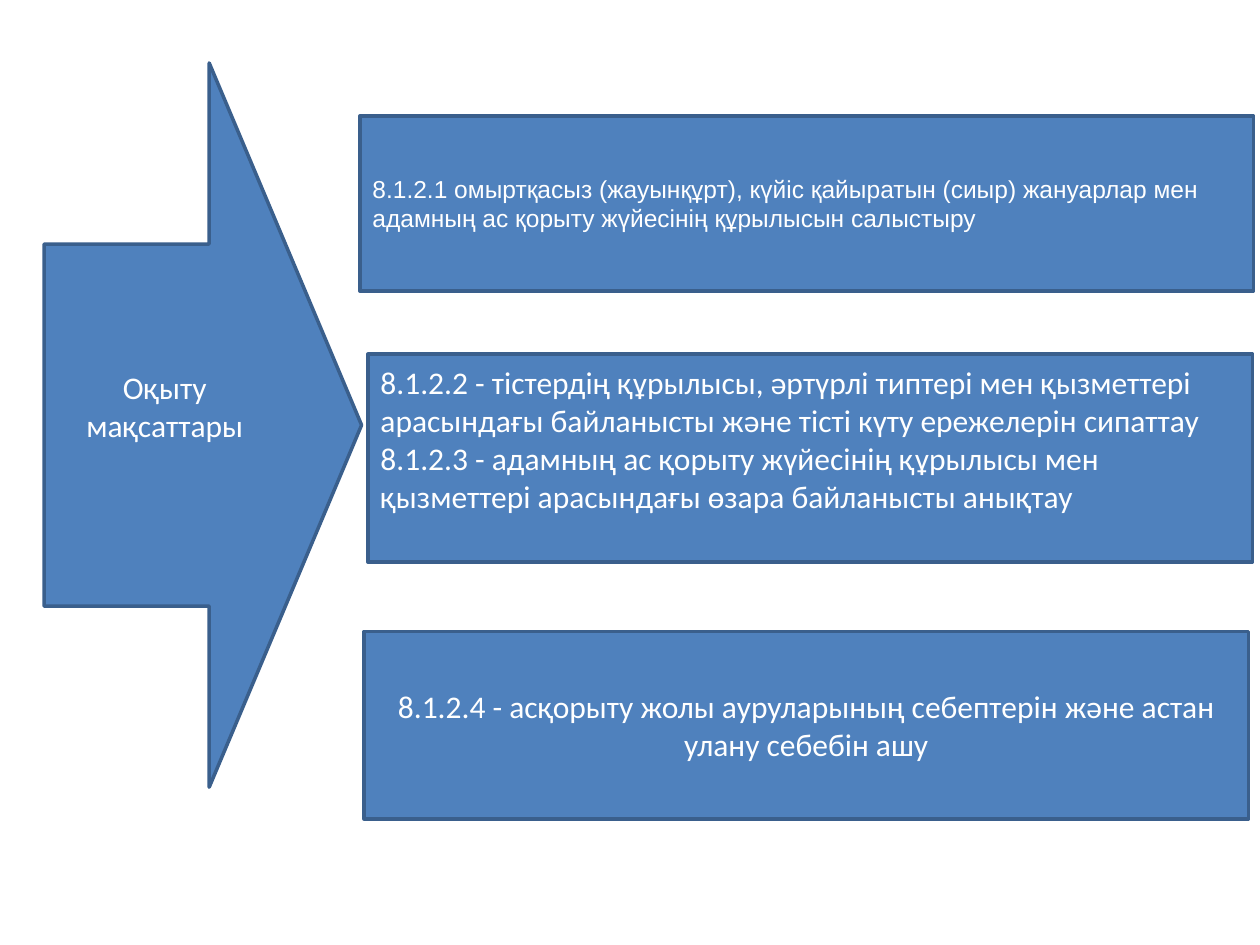
from pptx import Presentation
from pptx.dml.color import RGBColor
from pptx.enum.shapes import MSO_SHAPE
from pptx.enum.text import MSO_ANCHOR, PP_ALIGN
from pptx.util import Cm, Pt


def color(hex_string):
    return RGBColor.from_string(hex_string)


class GoalsSlide:
    FILL = "4F81BD"
    OUTLINE = "3A5F8C"
    TEXT = "FFFFFF"

    def __init__(self, slide):
        self.slide = slide

    def block(self, kind, bounds, lines, align, font="Calibri", size=18, bottom=0.13):
        """Add a filled shape with text; bounds and bottom inset are in cm."""
        shape = self.slide.shapes.add_shape(kind, *(Cm(length) for length in bounds))
        shape.shadow.inherit = False
        shape.fill.solid()
        shape.fill.fore_color.rgb = color(self.FILL)
        shape.line.color.rgb = color(self.OUTLINE)
        shape.line.width = Pt(2)

        frame = shape.text_frame
        frame.word_wrap = True
        frame.vertical_anchor = MSO_ANCHOR.MIDDLE
        frame.margin_bottom = Cm(bottom)
        frame.text = "\n".join(lines)
        for paragraph in frame.paragraphs:
            paragraph.alignment = align
            paragraph.font.name = font
            paragraph.font.size = Pt(size)
            paragraph.font.color.rgb = color(self.TEXT)
        return shape

    def goal(self, bounds, lines, align=PP_ALIGN.LEFT, **style):
        return self.block(MSO_SHAPE.RECTANGLE, bounds, lines, align, **style)

    def heading_arrow(self, bounds, heading, head_ratio, **style):
        arrow = self.block(MSO_SHAPE.RIGHT_ARROW, bounds, [heading], PP_ALIGN.CENTER, **style)
        arrow.adjustments[1] = head_ratio
        return arrow


def main():
    presentation = Presentation()
    presentation.slide_width = Cm(25.4)
    presentation.slide_height = Cm(19.05)
    blank_layout = presentation.slide_layouts[6]
    goals = GoalsSlide(presentation.slides.add_slide(blank_layout))

    goals.goal(
        (7.26, 2.34, 18.01, 3.53),
        ["8.1.2.1 омыртқасыз (жауынқұрт), күйіс қайыратын (сиыр) жануарлар мен "
         "адамның ас қорыту жүйесінің құрылысын салыстыру"],
        font="Arial", size=14,
    )
    goals.goal(
        (7.42, 7.14, 17.83, 4.19),
        ["8.1.2.2 - тістердің құрылысы, әртүрлі типтері мен қызметтері "
         "арасындағы байланысты және тісті күту ережелерін сипаттау",
         "8.1.2.3 - адамның ас қорыту жүйесінің құрылысы мен "
         "қызметтері арасындағы өзара байланысты анықтау"],
        bottom=0.9,
    )
    goals.goal(
        (7.34, 12.73, 17.83, 3.78),
        ["8.1.2.4 - асқорыту жолы ауруларының себептерін және астан "
         "улану себебін ашу"],
        align=PP_ALIGN.CENTER,
    )
    goals.heading_arrow((0.89, 1.27, 6.4, 14.6), "Оқыту мақсаттары", 0.48, bottom=0.9)

    presentation.save("out.pptx")


if __name__ == "__main__":
    main()
